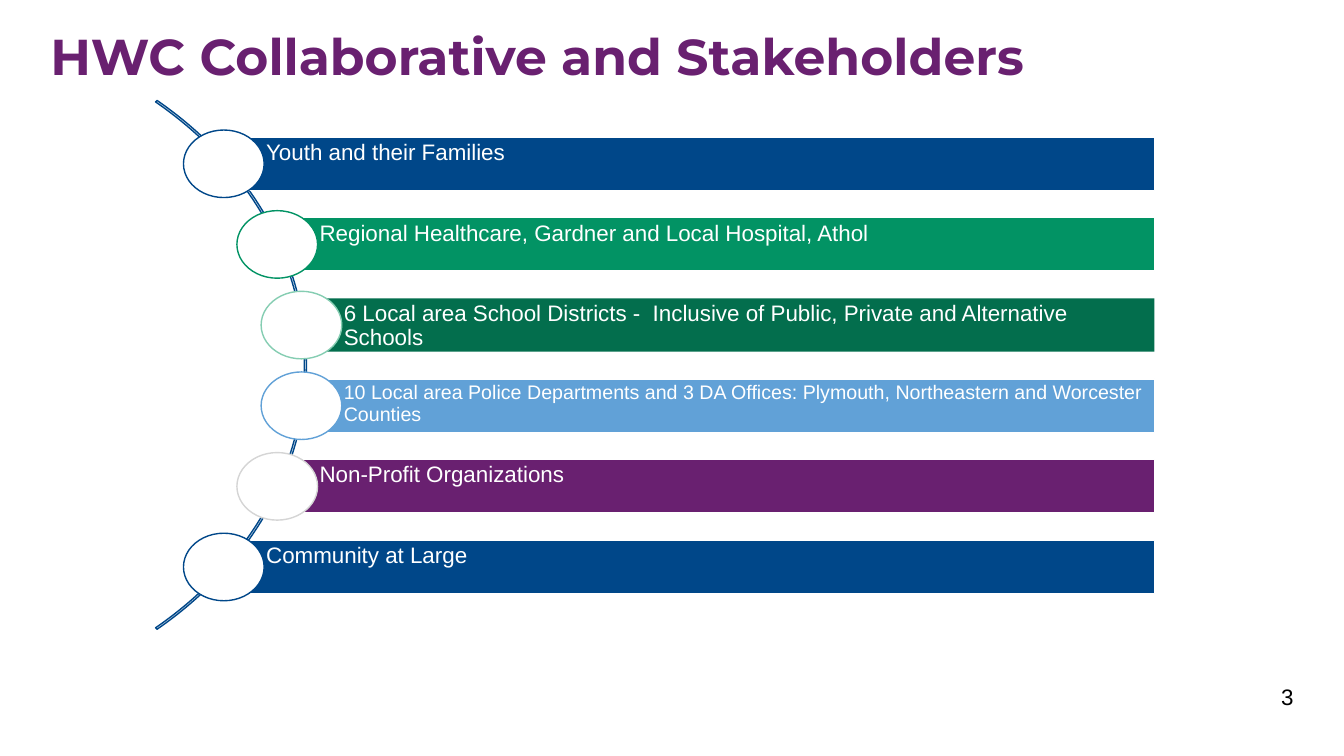
from pptx import Presentation
from pptx import util as u
from pptx.dml.color import RGBColor
from pptx.enum import shapes, text

PX = 9144  # EMU per px, 100 px to the inch

WHITE = RGBColor(0xFF, 0xFF, 0xFF)
BLACK = RGBColor(0, 0, 0)
NAVY = RGBColor(0x00, 0x47, 0x89)
GREEN = RGBColor(0x02, 0x93, 0x64)
FOREST = RGBColor(0x03, 0x6E, 0x4D)
MINT = RGBColor(0x85, 0xCD, 0xB2)
SKY = RGBColor(0x61, 0xA1, 0xD7)
PURPLE = RGBColor(0x69, 0x20, 0x70)
GREY = RGBColor(0xD5, 0xD5, 0xD5)

# Label, text size, bar colour, bar outline, circle outline, indent along the arc
STAKEHOLDERS = [
    ("Youth and their Families", 16, NAVY, WHITE, NAVY, 0),
    ("Regional Healthcare, Gardner and Local Hospital, Athol", 16, GREEN, WHITE, GREEN, 53),
    ("6 Local area School Districts -  Inclusive of Public, Private and Alternative Schools",
     16, FOREST, None, MINT, 77),
    ("10 Local area Police Departments and 3 DA Offices: Plymouth, Northeastern and "
     "Worcester Counties", 14, SKY, WHITE, SKY, 77),
    ("Non-Profit Organizations", 16, PURPLE, WHITE, GREY, 53),
    ("Community at Large", 16, NAVY, WHITE, NAVY, 0),
]


def emu(*lengths):
    return [u.Emu(n * PX) for n in lengths]


def write(s, words, size, color, font="Arial", bold=False, align=text.PP_ALIGN.LEFT,
          anchor=text.MSO_ANCHOR.TOP, insets=(0, 0, 0, 0), spacing=None):
    tf = s.text_frame
    tf.word_wrap = True
    tf.vertical_anchor = anchor
    tf.margin_left, tf.margin_top, tf.margin_right, tf.margin_bottom = emu(*insets)
    p = tf.paragraphs[0]
    p.alignment = align
    p.line_spacing = spacing
    r = p.add_run()
    r.text = words
    r.font.name, r.font.size, r.font.bold = font, u.Pt(size), bold
    r.font.color.rgb = color


def add_shape(slide, kind, box, fill=None, line=None):
    s = slide.shapes.add_shape(kind, *emu(*box))
    s.shadow.inherit = False
    if fill is None:
        s.fill.background()
    else:
        s.fill.solid()
        s.fill.fore_color.rgb = fill
    if line is None:
        s.line.fill.background()
    else:
        s.line.color.rgb = line
        s.line.width = u.Pt(1)
    return s


def add_title(slide, box):
    s = slide.shapes.add_textbox(*emu(*box))
    write(s, "HWC Collaborative and Stakeholders", 36, PURPLE, font="Montserrat", bold=True,
          anchor=text.MSO_ANCHOR.MIDDLE, insets=(0, 0, 0, 5), spacing=0.9)


def add_page_number(slide, box):
    s = slide.shapes.add_textbox(*emu(*box))
    write(s, "3", 16, BLACK, align=text.PP_ALIGN.RIGHT, insets=(10, 5, 0, 5))


def add_stakeholder_list(slide, box):
    left, top, width, height = box
    circle_w, circle_h, bar_h = 80, 67, 53
    pitch = (height - circle_h) // (len(STAKEHOLDERS) - 1)

    # Arc behind the rows: angles in units of 100000, then relative thickness
    arc = add_shape(slide, shapes.MSO_SHAPE.BLOCK_ARC,
                    (left - 699, top - 108, 821, 682), line=NAVY)
    for i, value in enumerate((189, 27, 0.003)):
        arc.adjustments[i] = value

    # One bar and one circle per stakeholder
    for i, (label, size, fill, outline, ring, indent) in enumerate(STAKEHOLDERS):
        x, y = left + indent, top + i * pitch
        bar_x = x + circle_w // 2
        bar = add_shape(slide, shapes.MSO_SHAPE.RECTANGLE,
                        (bar_x, y + (circle_h - bar_h) // 2, left + width - bar_x, bar_h),
                        fill, outline)
        write(bar, label, size, WHITE, insets=(42, 4, 4, 4), spacing=0.9)
        add_shape(slide, shapes.MSO_SHAPE.OVAL, (x, y, circle_w, circle_h), WHITE, ring)


def main():
    prs = Presentation()
    prs.slide_width, prs.slide_height = emu(1333, 750)
    slide = prs.slides.add_slide(prs.slide_layouts[6])
    add_page_number(slide, (983, 673, 300, 40))
    add_title(slide, (50, 10, 1233, 102))
    add_stakeholder_list(slide, (182, 129, 963, 467))
    prs.save("out.pptx")


if __name__ == "__main__":
    main()
